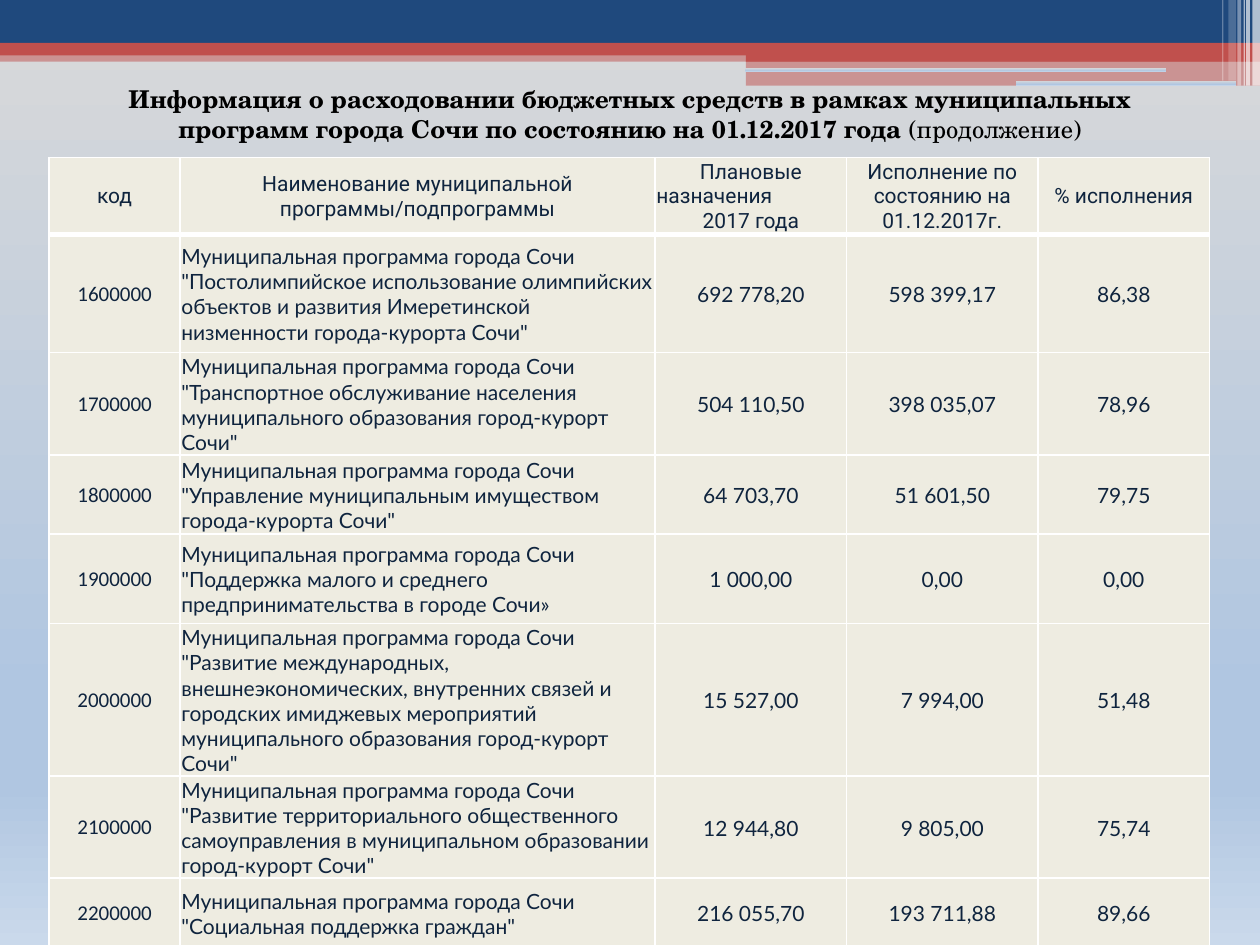
from lxml import etree
from pptx import Presentation
from pptx.dml.color import RGBColor
from pptx.enum.shapes import MSO_SHAPE
from pptx.enum.text import MSO_ANCHOR, MSO_AUTO_SIZE, PP_ALIGN
from pptx.oxml.ns import qn
from pptx.util import Inches, Pt

RECT, ROUNDED = MSO_SHAPE.RECTANGLE, MSO_SHAPE.ROUNDED_RECTANGLE
LEFT, CENTER = PP_ALIGN.LEFT, PP_ALIGN.CENTER
TOP, MIDDLE = MSO_ANCHOR.TOP, MSO_ANCHOR.MIDDLE
FIT_SHAPE = MSO_AUTO_SIZE.SHAPE_TO_FIT_TEXT

WIDTH, HEIGHT = 10, 7.5
TITLE_ONLY = 5
COLORS = {"navy": "1F497D", "red": "C0504D", "white": "FFFFFF",
          "cell": "EEECE1", "ink": "0F243E", "title": "000000"}
SKY = [(0, "D9D9D9"), (74, "B0C6E1"), (83, "B0C6E1"), (100, "CAD9EB")]

# left, top, width, height, colour, opacity in percent
BANDS = [
    (0, 0.4, WIDTH, 0.09, "red", 50),
    (0, 0, WIDTH, 0.34, "navy", 100),
    (0, 0.34, WIDTH, 0.1, "red", 100),
    (5.92, 0.39, 4.08, 0.1, "red", 100),
    (5.92, 0.48, 4.08, 0.2, "red", 50),
]
SLOTS = [(5.91, 0.54, 3.35, 0.03), (8.06, 0.64, 1.75, 0.04)]
# left, width, height, opacity in percent
STRIPES = [(9.94, 0.06, 0.68, 65), (9.89, 0.03, 0.68, 65), (9.87, 0.01, 0.68, 60),
           (9.82, 0.03, 0.68, 40), (9.75, 0.06, 0.64, 20), (9.7, 0.01, 0.64, 30)]

TITLE_BOLD = ("Информация о расходовании бюджетных средств в рамках муниципальных "
              "программ города Сочи по состоянию на 01.12.2017 года ")
TITLE_PLAIN = "(продолжение)"

COLUMN_WIDTHS = [1.04, 3.77, 1.52, 1.52, 1.36]
ROW_HEIGHTS = [0.61, 0.94, 0.71, 0.63, 0.71, 1.06, 0.74, 0.55]
HEADERS = [
    [("код", CENTER)],
    [("Наименование муниципальной программы/подпрограммы", CENTER)],
    [("Плановые", CENTER), ("назначения", LEFT), ("2017 года", CENTER)],
    [("Исполнение по состоянию на 01.12.2017г.", CENTER)],
    [("% исполнения", CENTER)],
]
PROGRAM_PREFIX = "Муниципальная программа города Сочи "
PROGRAMS = [
    ("1600000", '"Постолимпийское использование олимпийских объектов и развития '
     'Имеретинской низменности города-курорта Сочи"', "692 778,20", "598 399,17", "86,38"),
    ("1700000", '"Транспортное обслуживание населения муниципального образования '
     'город-курорт Сочи"', "504 110,50", "398 035,07", "78,96"),
    ("1800000", '"Управление муниципальным имуществом города-курорта Сочи"',
     "64 703,70", "51 601,50", "79,75"),
    ("1900000", '"Поддержка малого и среднего предпринимательства в городе Сочи»',
     "1 000,00", "0,00", "0,00"),
    ("2000000", '"Развитие международных, внешнеэкономических, внутренних связей и '
     'городских имиджевых мероприятий муниципального образования город-курорт Сочи"',
     "15 527,00", "7 994,00", "51,48"),
    ("2100000", '"Развитие территориального общественного самоуправления в '
     'муниципальном образовании город-курорт Сочи"', "12 944,80", "9 805,00", "75,74"),
    ("2200000", '"Социальная поддержка граждан"', "216 055,70", "193 711,88", "89,66"),
]


def rgb(name):
    return RGBColor.from_string(COLORS[name])


def fill_sky(fill, owner):
    """Apply the vertical four-stop gradient to a fill inside the owner element."""
    fill.gradient()
    fill.gradient_angle = 270
    stops = owner.find(".//" + qn("a:gsLst"))
    for old_stop in list(stops):
        stops.remove(old_stop)
    for share, color in SKY:
        stop = etree.SubElement(stops, qn("a:gs"), pos=str(share * 1000))
        etree.SubElement(stop, qn("a:srgbClr"), val=color)


def add_block(slide, left, top, width, height, color=None, opacity=100, kind=RECT):
    """Add a borderless block; without a colour it takes the background gradient."""
    block = slide.shapes.add_shape(kind, Inches(left), Inches(top),
                                   Inches(width), Inches(height))
    block.shadow.inherit = False
    block.line.fill.background()
    if color is None:
        fill_sky(block.fill, block._element)
        return
    block.fill.solid()
    block.fill.fore_color.rgb = rgb(color)
    if opacity < 100:
        tint = block._element.spPr.find(".//" + qn("a:srgbClr"))
        etree.SubElement(tint, qn("a:alpha"), val=str(opacity * 1000))


def write(paragraph, text, font, size=12, color="ink", bold=False, align=CENTER):
    paragraph.alignment = align
    run = paragraph.add_run()
    run.text = text
    run.font.name = font
    run.font.size = Pt(size)
    run.font.bold = bold
    run.font.color.rgb = rgb(color)


def set_borders(cell, top=1, bottom=1):
    properties = cell._tc.get_or_add_tcPr()
    sides = [("lnL", 1), ("lnR", 1), ("lnT", top), ("lnB", bottom)]
    for place, (side, points) in enumerate(sides):
        border = etree.Element(qn("a:" + side), w=str(Pt(points)))
        paint = etree.SubElement(border, qn("a:solidFill"))
        etree.SubElement(paint, qn("a:srgbClr"), val=COLORS["white"])
        properties.insert(place, border)


def fill_cell(cell, lines, font, **borders):
    """Write (text, alignment) lines into a cell and format it."""
    cell.fill.solid()
    cell.fill.fore_color.rgb = rgb("cell")
    cell.vertical_anchor = MIDDLE
    cell.margin_left = cell.margin_right = cell.margin_top = Inches(0.01)
    cell.margin_bottom = 0
    frame = cell.text_frame
    for number, (text, align) in enumerate(lines):
        paragraph = frame.add_paragraph() if number else frame.paragraphs[0]
        write(paragraph, text, font, align=align)
    set_borders(cell, **borders)


def add_decor(slide):
    for band in BANDS:
        add_block(slide, *band)
    for slot in SLOTS:
        add_block(slide, *slot, kind=ROUNDED)
    for left, width, height, opacity in STRIPES:
        add_block(slide, left, 0, width, height, "white", opacity)


def add_program_table(slide):
    table = slide.shapes.add_table(
        len(ROW_HEIGHTS), len(COLUMN_WIDTHS), Inches(0.39), Inches(1.25),
        Inches(sum(COLUMN_WIDTHS)), Inches(sum(ROW_HEIGHTS))).table
    table.first_row = table.horz_banding = False
    for column, width in zip(table.columns, COLUMN_WIDTHS):
        column.width = Inches(width)
    for row, height in zip(table.rows, ROW_HEIGHTS):
        row.height = Inches(height)

    for column, lines in enumerate(HEADERS):
        fill_cell(table.cell(0, column), lines, "Roboto", bottom=3)
    for row, (code, name, *amounts) in enumerate(PROGRAMS, start=1):
        top = 3 if row == 1 else 1
        fill_cell(table.cell(row, 0), [(code, CENTER)], "Calibri", top=top)
        fill_cell(table.cell(row, 1), [(PROGRAM_PREFIX + name, LEFT)], "Lato", top=top)
        for column, amount in enumerate(amounts, start=2):
            fill_cell(table.cell(row, column), [(amount, CENTER)], "Lato", top=top)


def place_title(slide):
    title = slide.shapes.title
    title.left, title.top = Inches(0.55), Inches(0.62)
    title.width, title.height = Inches(8.9), Inches(0.57)
    frame = title.text_frame
    frame.word_wrap = True
    frame.auto_size = FIT_SHAPE
    frame.vertical_anchor = TOP
    for text, bold in [(TITLE_BOLD, True), (TITLE_PLAIN, False)]:
        write(frame.paragraphs[0], text, "TeX Gyre Schola", 14, "title", bold)
    slide.shapes._spTree.append(title._element)


def main():
    deck = Presentation()
    deck.slide_width, deck.slide_height = Inches(WIDTH), Inches(HEIGHT)
    slide = deck.slides.add_slide(deck.slide_layouts[TITLE_ONLY])
    fill_sky(slide.background.fill, slide._element)
    add_decor(slide)
    add_program_table(slide)
    place_title(slide)
    deck.save("out.pptx")


if __name__ == "__main__":
    main()
